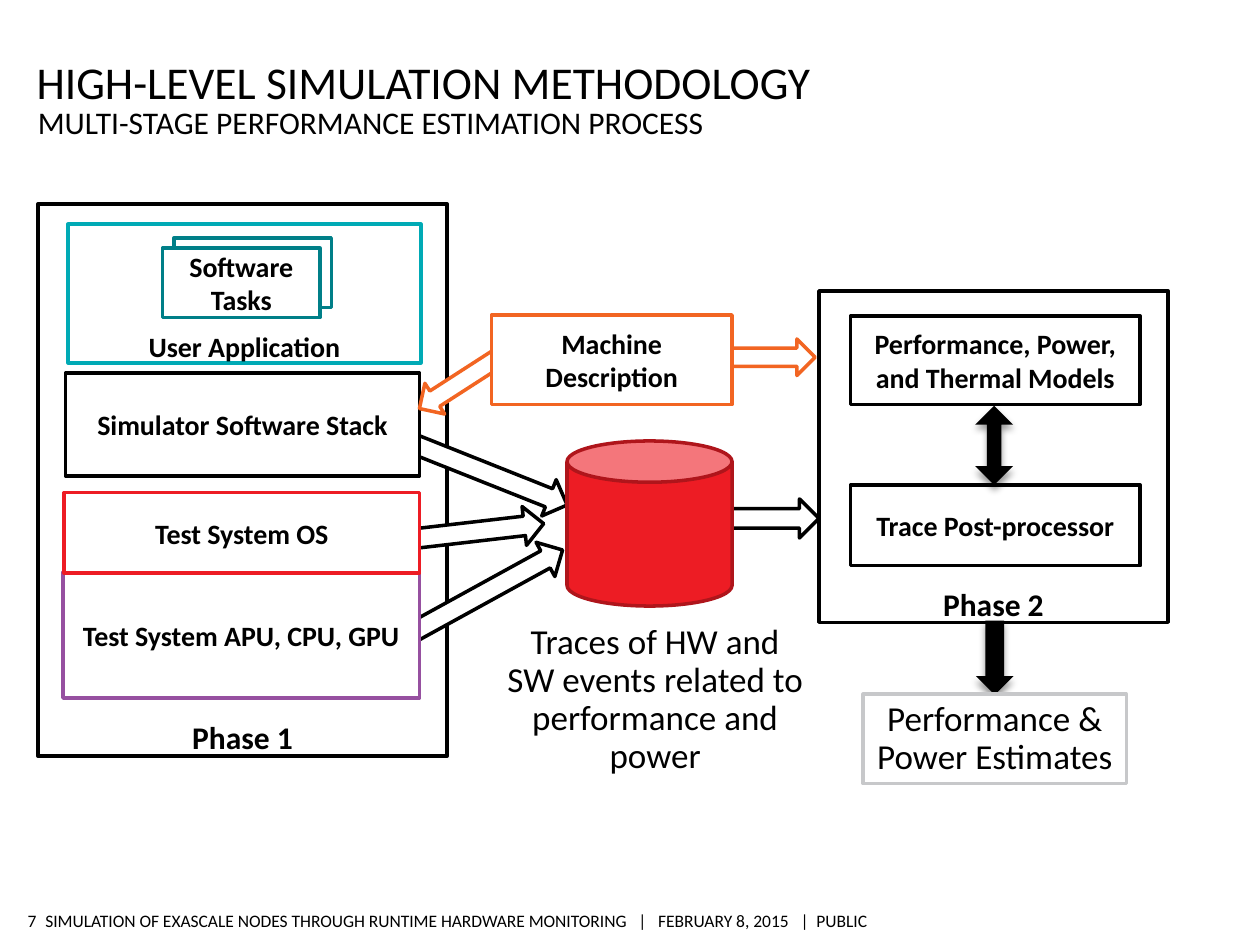
"""Build the high-level simulation methodology slide."""
import pptx
import pptx.dml.color
import pptx.enum.shapes
import pptx.enum.text
import pptx.oxml
import pptx.oxml.ns
import pptx.util

Inches = pptx.util.Inches
Pt = pptx.util.Pt
SHAPE = pptx.enum.shapes.MSO_SHAPE
ALIGN = pptx.enum.text.PP_ALIGN
ANCHOR = pptx.enum.text.MSO_ANCHOR

BLACK, WHITE, ORANGE, RED = "000000", "FFFFFF", "F26522", "ED1C24"
SHADOW = (
    f'<a:effectLst {pptx.oxml.ns.nsdecls("a")}>'
    '<a:outerShdw blurRad="50800" dist="38100" dir="5400000" rotWithShape="0">'
    '<a:srgbClr val="000000"><a:alpha val="40000"/></a:srgbClr>'
    '</a:outerShdw></a:effectLst>'
)


def rgb(value):
    return pptx.dml.color.RGBColor.from_string(value)


class Deck:
    font = "Calibri"
    line_width = 2

    def __init__(self, width, height):
        self.prs = pptx.Presentation()
        self.prs.slide_width, self.prs.slide_height = Inches(width), Inches(height)
        self.s = self.prs.slides.add_slide(self.prs.slide_layouts[6])

    def set_text(self, sp, text, size, bold=False, align=ALIGN.CENTER, anchor=ANCHOR.MIDDLE,
                 insets=(0.1, 0.05, 0.1, 0.05), wrap=True, spacing=None):
        tf = sp.text_frame
        tf.word_wrap = wrap
        tf.vertical_anchor = anchor
        tf.margin_left, tf.margin_top, tf.margin_right, tf.margin_bottom = map(Inches, insets)
        p = tf.paragraphs[0]
        p.text = text
        p.alignment = align
        if spacing:
            p.line_spacing = spacing
        p.font.name, p.font.size, p.font.bold = self.font, Pt(size), bold
        p.font.color.rgb = rgb(BLACK)

    def text(self, box, text, size, **style):
        sp = self.s.shapes.add_textbox(*map(Inches, box))
        self.set_text(sp, text, size, **style)

    def shape(self, kind, box, line=BLACK, fill=WHITE, rotation=0):
        sp = self.s.shapes.add_shape(kind, *map(Inches, box))
        sp.shadow.inherit = False
        sp.fill.solid()
        sp.fill.fore_color.rgb = rgb(fill)
        sp.line.color.rgb = rgb(line)
        sp.line.width = Pt(self.line_width)
        sp.rotation = rotation
        return sp

    def box(self, box, text, line=BLACK, size=16, bold=True, **style):
        sp = self.shape(SHAPE.RECTANGLE, box, line)
        self.set_text(sp, text, size, bold, **style)

    def arrow(self, box, line=BLACK, rotation=0):
        self.shape(SHAPE.RIGHT_ARROW, box, line, rotation=rotation)

    def solid_arrow(self, kind, box, rotation=0, adjustments=()):
        sp = self.shape(kind, box, fill=BLACK, rotation=rotation)
        sp.line.fill.background()
        for i, value in enumerate(adjustments):
            sp.adjustments[i] = value
        effects = sp._element.spPr.find(pptx.oxml.ns.qn("a:effectLst"))
        effects.getparent().replace(effects, pptx.oxml.parse_xml(SHADOW))


def main():
    deck = Deck(10, 7.5)
    footer = dict(insets=(0, 0.04, 0, 0.04), wrap=False)
    deck.text((0.36, 7.18, 6.79, 0.26),
              "SIMULATION OF EXASCALE NODES THROUGH RUNTIME HARDWARE MONITORING"
              "   |   FEBRUARY 8, 2015   |  PUBLIC", 10, align=ALIGN.LEFT, **footer)
    deck.text((0.13, 7.18, 0.16, 0.26), "7", 10, align=ALIGN.RIGHT, **footer)
    deck.text((0.29, 0.34, 8.4, 0.52), "HIGH-LEVEL SIMULATION METHODOLOGY", 26,
              align=ALIGN.LEFT, anchor=ANCHOR.BOTTOM, insets=(0, 0.05, 0, 0))
    deck.text((0.3, 0.82, 8.4, 0.31), "MULTI-STAGE PERFORMANCE ESTIMATION PROCESS", 18,
              align=ALIGN.LEFT, anchor=ANCHOR.TOP, insets=(0, 0, 0, 0))

    phase = dict(size=18, anchor=ANCHOR.BOTTOM, insets=(0.25, 0.05, 0.25, 0))
    deck.box((6.5, 2.31, 2.77, 2.63), "Phase 2", **phase)
    deck.box((0.3, 1.62, 3.25, 4.38), "Phase 1", **phase)

    deck.arrow((3.18, 3.6, 1.37, 0.31), rotation=21.7)
    deck.arrow((3.18, 4.54, 1.37, 0.31), rotation=331.2)
    deck.arrow((2.95, 4.08, 1.37, 0.31), rotation=353.4)

    deck.box((0.54, 1.78, 2.8, 1.1), "User Application", "00AAB5",
             anchor=ANCHOR.BOTTOM, insets=(0.1, 0.05, 0.1, 0))
    deck.shape(SHAPE.RECTANGLE, (1.38, 1.89, 1.25, 0.55), "007F88")
    for box, text, line in (
        ((1.29, 1.97, 1.25, 0.55), "Software Tasks", "007F88"),
        ((0.52, 2.96, 2.81, 0.82), "Simulator Software Stack", BLACK),
        ((0.5, 4.54, 2.83, 1), "Test System APU, CPU, GPU", "9650A0"),
        ((0.51, 3.91, 2.82, 0.64), "Test System OS", RED),
        ((6.75, 2.51, 2.3, 0.7), "Performance, Power, and Thermal Models", BLACK),
        ((6.75, 3.85, 2.3, 0.64), "Trace Post-processor", BLACK),
    ):
        deck.box(box, text, line)

    deck.arrow((3.27, 2.9, 0.73, 0.29), ORANGE, rotation=147.2)
    deck.arrow((5.74, 2.69, 0.73, 0.29), ORANGE)
    deck.box((3.9, 2.5, 1.91, 0.71), "Machine Description", ORANGE)

    deck.arrow((5.51, 3.96, 0.99, 0.31))
    deck.shape(SHAPE.CAN, (4.5, 3.5, 1.31, 1.31), "AF151B", RED)
    deck.text((3.9, 4.9, 2.6, 1.31),
              "Traces of HW and SW events related to performance and power", 20, spacing=0.9)

    deck.solid_arrow(SHAPE.RIGHT_ARROW, (7.6, 5.07, 0.59, 0.3), rotation=90)
    deck.box((6.85, 5.51, 2.09, 0.71), "Performance & Power Estimates", "C7C8CA",
             size=20, bold=False, spacing=0.9)
    deck.solid_arrow(SHAPE.UP_DOWN_ARROW, (7.74, 3.22, 0.3, 0.63), adjustments=(0.41, 0.38))
    deck.prs.save("out.pptx")


if __name__ == "__main__":
    main()
